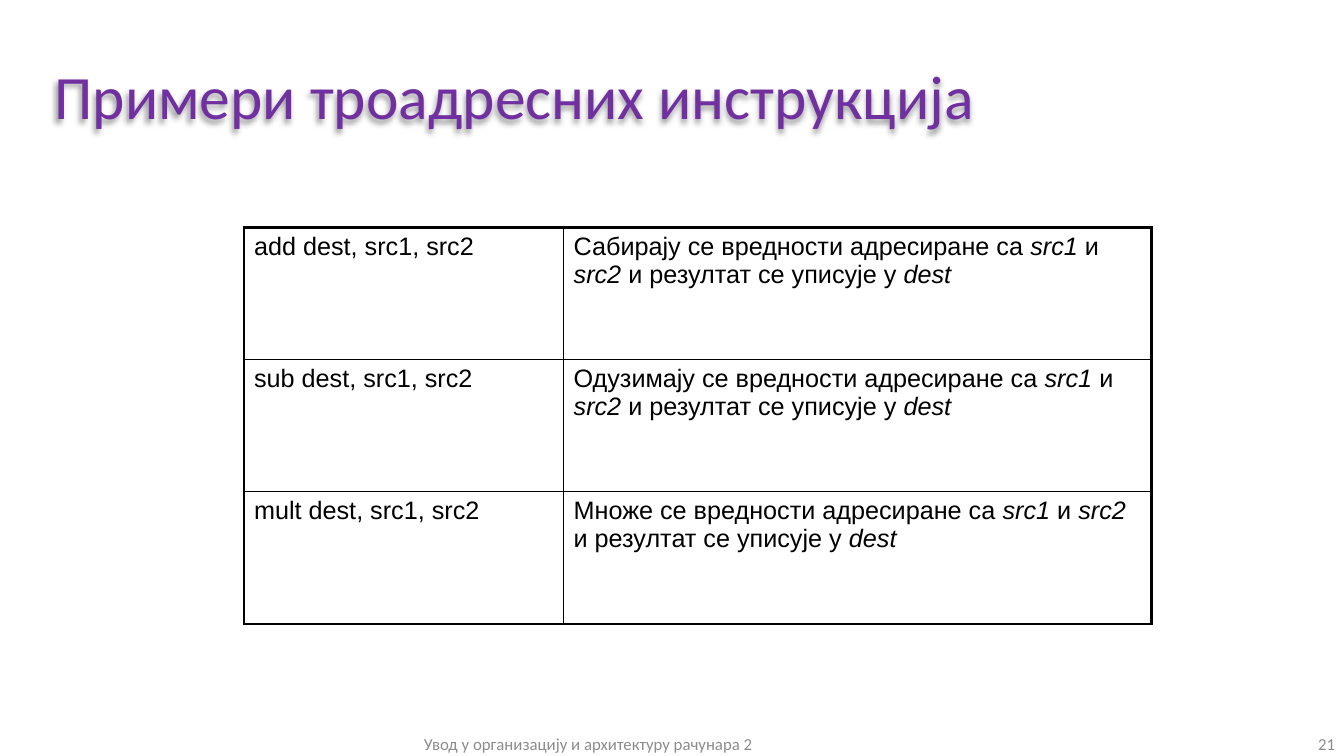
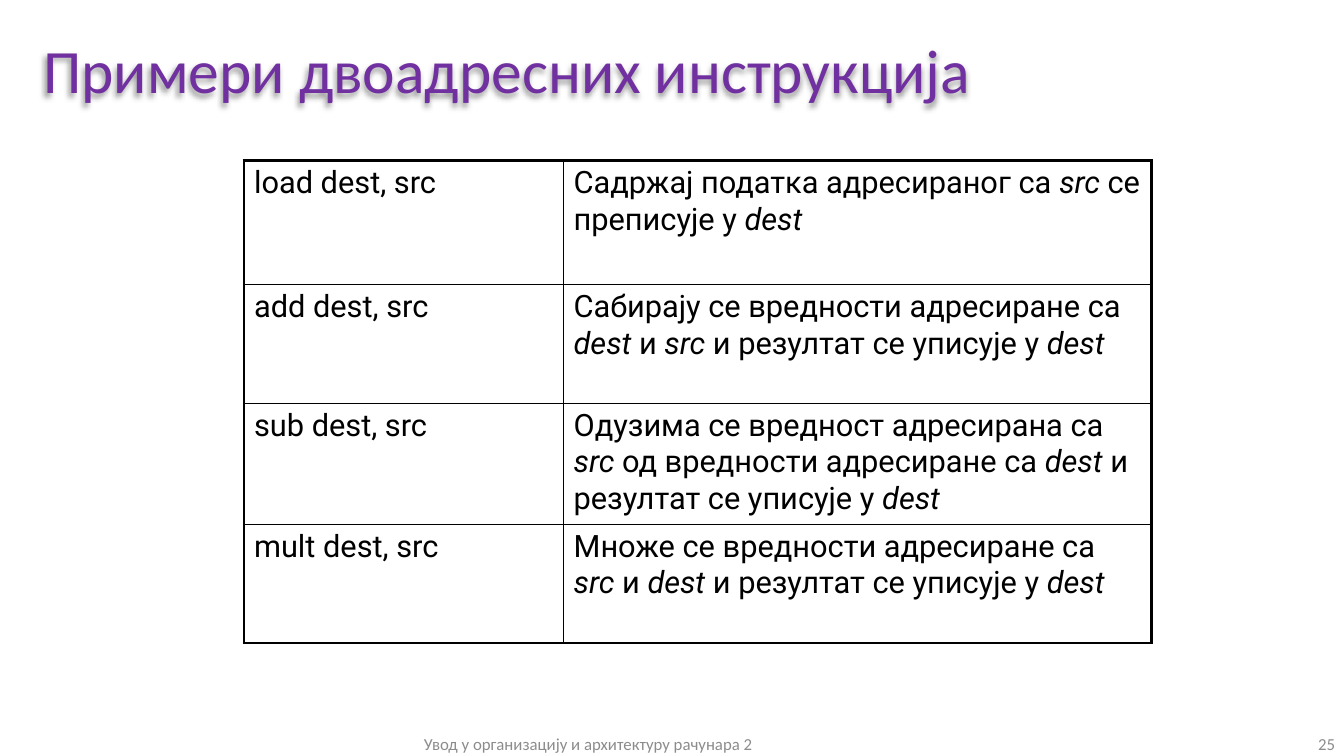
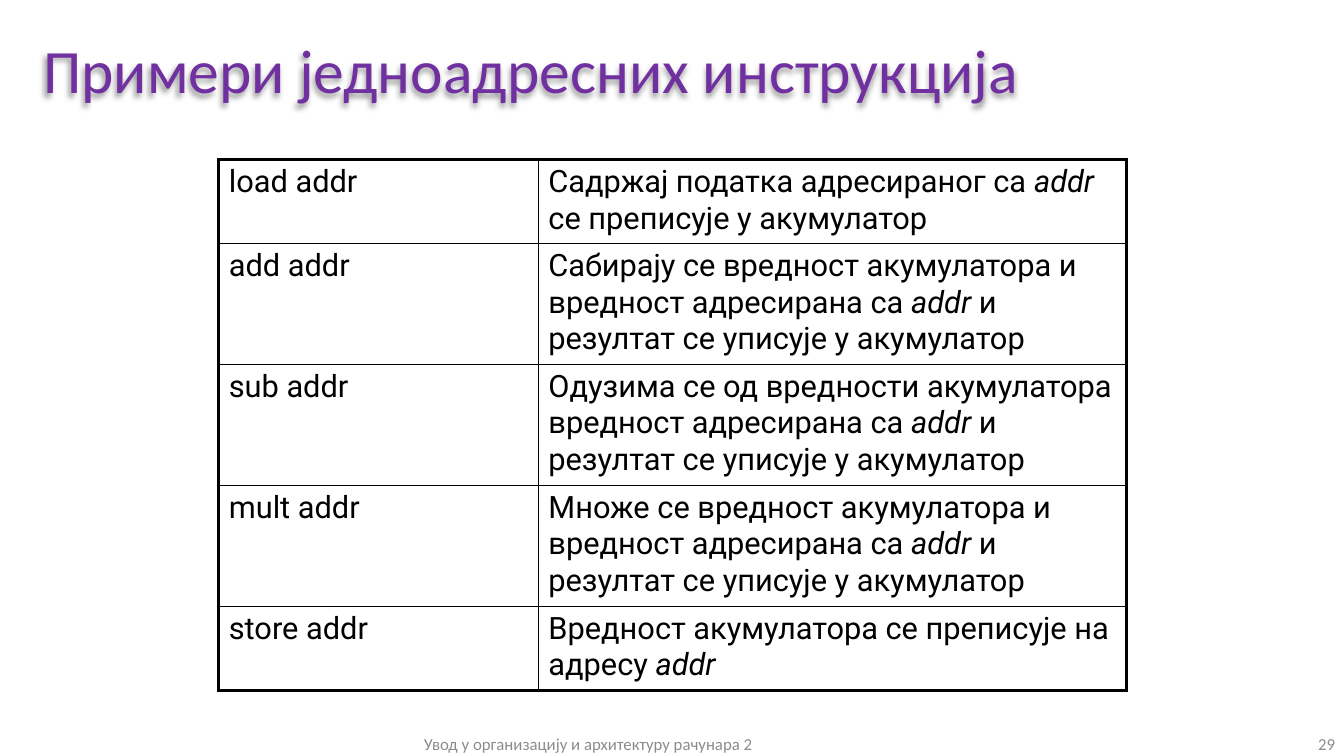
from lxml import etree
from pptx import Presentation
from pptx.dml.color import RGBColor
from pptx.enum.text import MSO_ANCHOR as Anchor, PP_ALIGN as Align
from pptx.oxml import parse_xml
from pptx.oxml.ns import nsdecls, qn
from pptx.util import Inches, Pt

BLACK = RGBColor(0x00, 0x00, 0x00)
WHITE = RGBColor(0xFF, 0xFF, 0xFF)
PURPLE = RGBColor(0x70, 0x30, 0xA0)
GREY = RGBColor(0x8C, 0x8C, 0x8C)

HEADING_FONT = "Calibri"
FOOTER = "Увод у организацију и архитектуру рачунара 2"
COLUMN_WIDTHS = (3.17, 5.83)
OUTER_LINE, INNER_LINE = 2.25, 1

RESULT_IN_DEST = "и резултат се уписује у *dest*"
RESULT_IN_ACCUMULATOR = "вредност адресирана са *addr* и резултат се уписује у акумулатор"

THREE_ADDRESS = [
    ("add dest, src1, src2", f"Сабирају се вредности адресиране са *src1* и *src2* {RESULT_IN_DEST}"),
    ("sub dest, src1, src2", f"Одузимају се вредности адресиране са *src1* и *src2* {RESULT_IN_DEST}"),
    ("mult dest, src1, src2", f"Множе се вредности адресиране са *src1* и *src2* {RESULT_IN_DEST}"),
]
TWO_ADDRESS = [
    ("load dest, src", "Садржај податка адресираног са *src *се преписује у *dest*"),
    ("add dest, src", f"Сабирају се вредности адресиране са *dest* и *src* {RESULT_IN_DEST}"),
    ("sub dest, src", f"Одузима се вредност адресирана са *src* од вредности адресиране са *dest* {RESULT_IN_DEST}"),
    ("mult dest, src", f"Множе се вредности адресиране са *src* и *dest* {RESULT_IN_DEST}"),
]
ONE_ADDRESS = [
    ("load addr", "Садржај податка адресираног са *addr *се преписује у акумулатор"),
    ("add addr", f"Сабирају се вредност акумулатора и {RESULT_IN_ACCUMULATOR}"),
    ("sub addr", f"Одузима се од вредности акумулатора {RESULT_IN_ACCUMULATOR}"),
    ("mult addr", f"Множе се вредност акумулатора и {RESULT_IN_ACCUMULATOR}"),
    ("store addr", "Вредност акумулатора се преписује на адресу *addr*"),
]


def write(frame, text, *, font, size, color, align=Align.LEFT, line_spacing=None, space_before=None):
    """Fill a text frame with one paragraph; parts between asterisks are italic."""
    frame.word_wrap = True
    para = frame.paragraphs[0]
    para.alignment = align
    para.line_spacing = line_spacing
    para.space_before = space_before
    for index, part in enumerate(text.split("*")):
        if part:
            span = para.add_run()
            span.text = part
            span.font.name = font
            span.font.size = Pt(size)
            span.font.color.rgb = color
            span.font.italic = index % 2 == 1


def set_borders(cell, widths):
    """Draw the cell edges; widths in points, keyed by L, R, T and B."""
    properties = cell._tc.get_or_add_tcPr()
    for side in "LRTB":
        line = etree.SubElement(properties, qn(f"a:ln{side}"), w=str(Pt(widths[side])))
        fill = etree.SubElement(line, qn("a:solidFill"))
        etree.SubElement(fill, qn("a:srgbClr"), val=str(BLACK))


class InstructionDeck:
    def __init__(self):
        self.deck = Presentation()
        self.deck.slide_width, self.deck.slide_height = Inches(13.33), Inches(7.5)
        self.page = None

    def add_page(self, title, left, top, number):
        self.page = self.deck.slides.add_slide(self.deck.slide_layouts[5])
        self.page.background.fill.solid()
        self.page.background.fill.fore_color.rgb = WHITE
        self.title(title, left, top)
        self.footer_text(FOOTER, 0, 11.67, Align.CENTER)
        self.footer_text(str(number), 11.67, 1.67, Align.RIGHT)

    def title(self, text, left, top):
        box = self.page.shapes.title
        box.left, box.top = Inches(left), Inches(top)
        box.width, box.height = Inches(11.22), Inches(1.2)
        box.fill.background()
        box.text_frame.vertical_anchor = Anchor.MIDDLE
        write(box.text_frame, text, font=HEADING_FONT, size=44, color=PURPLE, line_spacing=0.9)
        box._element.spPr.append(parse_xml(
            f'<a:effectLst {nsdecls("a")}>'
            '<a:outerShdw blurRad="50800" dist="38100" dir="8100000" algn="tr" rotWithShape="0">'
            '<a:prstClr val="black"><a:alpha val="40000"/></a:prstClr>'
            '</a:outerShdw></a:effectLst>'))

    def footer_text(self, text, left, width, align):
        box = self.page.shapes.add_textbox(Inches(left), Inches(7.25), Inches(width), Inches(0.25))
        box.text_frame.vertical_anchor = Anchor.MIDDLE
        write(box.text_frame, text, font=HEADING_FONT, size=12, color=GREY, align=align)

    def instruction_table(self, rows, left, top, heights, **text_format):
        table = self.page.shapes.add_table(
            len(rows), len(COLUMN_WIDTHS), Inches(left), Inches(top),
            Inches(sum(COLUMN_WIDTHS)), Inches(sum(heights))).table
        table.first_row = table.horz_banding = False
        for column, width in zip(table.columns, COLUMN_WIDTHS):
            column.width = Inches(width)
        for row, height in zip(table.rows, heights):
            row.height = Inches(height)
        last_row, last_column = len(rows) - 1, len(COLUMN_WIDTHS) - 1
        for r, texts in enumerate(rows):
            for c, text in enumerate(texts):
                cell = table.cell(r, c)
                outer = {"L": c == 0, "R": c == last_column, "T": r == 0, "B": r == last_row}
                set_borders(cell, {side: OUTER_LINE if edge else INNER_LINE for side, edge in outer.items()})
                cell.fill.background()
                write(cell.text_frame, text, color=BLACK, **text_format)


def main():
    slides = InstructionDeck()
    roboto = {"font": "Roboto", "size": 22, "space_before": Pt(4.4)}

    slides.add_page("Примери троадресних инструкција", 0.44, 0.39, 21)
    slides.instruction_table(THREE_ADDRESS, 2.42, 2.26, [1.31] * 3, font="Arial", size=18)

    slides.add_page("Примери двоадресних инструкција", 0.33, 0.13, 25)
    slides.instruction_table(TWO_ADDRESS, 2.42, 1.59, [1.23] + [1.18] * 3, **roboto)

    slides.add_page("Примери једноадресних инструкција", 0.33, 0.13, 29)
    slides.instruction_table(ONE_ADDRESS, 2.17, 1.58, [0.82] + [1.18] * 3 + [0.82], **roboto)

    slides.deck.save("out.pptx")


if __name__ == "__main__":
    main()
